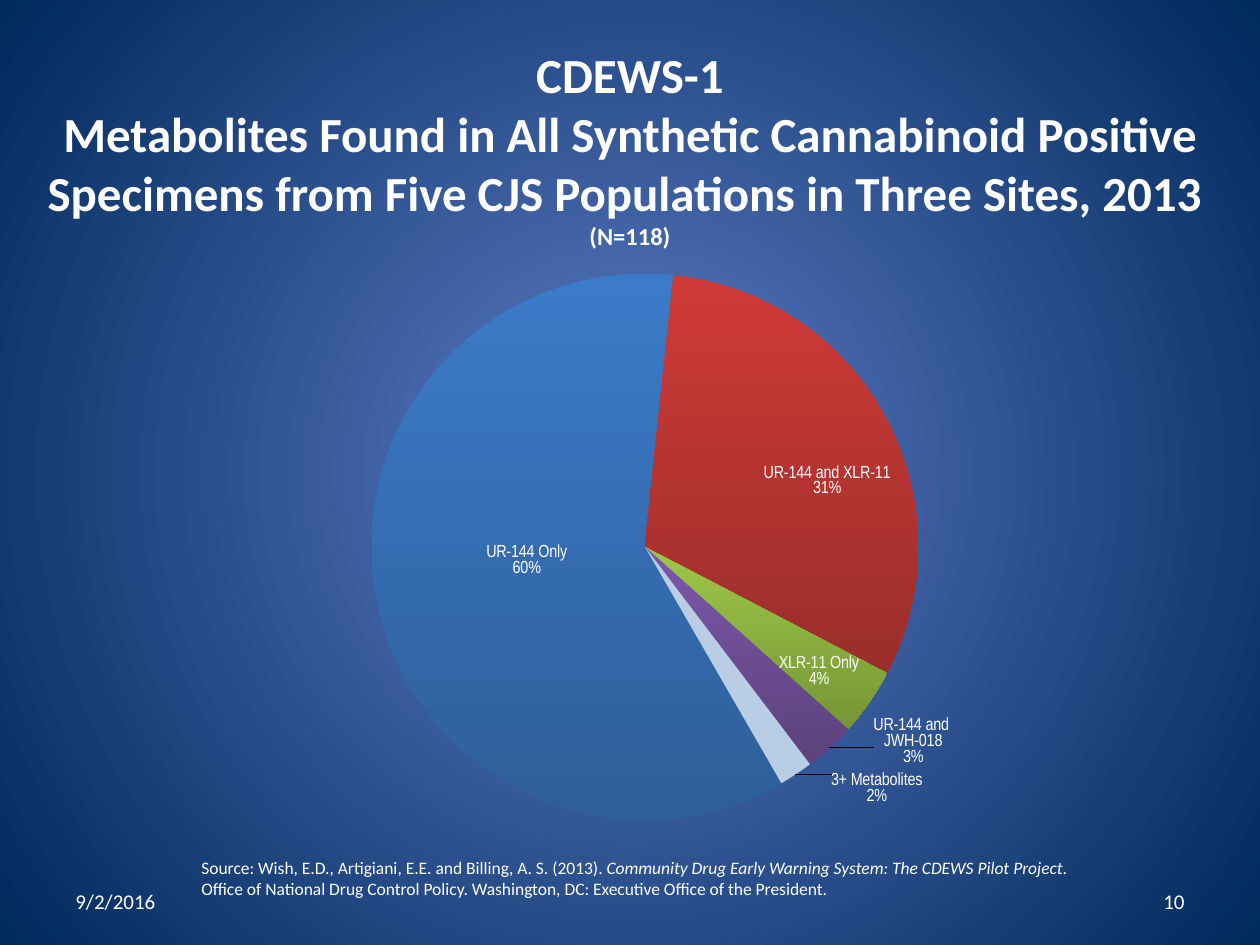
from lxml.etree import SubElement
from pptx import Presentation
from pptx.chart.data import CategoryChartData
from pptx.dml.color import RGBColor
from pptx.enum.chart import XL_CHART_TYPE, XL_LABEL_POSITION
from pptx.enum.text import MSO_ANCHOR, PP_ALIGN
from pptx.oxml.ns import qn
from pptx.util import Inches, Pt

WHITE = RGBColor(0xFF, 0xFF, 0xFF)
GLOW = RGBColor(0x5E, 0x7C, 0xC5)
NAVY = RGBColor(0x00, 0x29, 0x5C)
BLUE = RGBColor(0x3C, 0x7B, 0xC9), RGBColor(0x2E, 0x5F, 0x99)
RED = RGBColor(0xD0, 0x3A, 0x36), RGBColor(0x9A, 0x2E, 0x2B)
GREEN = RGBColor(0x9D, 0xC8, 0x48), RGBColor(0x76, 0x95, 0x35)
PURPLE = RGBColor(0x7C, 0x57, 0xA8), RGBColor(0x5D, 0x42, 0x7D)
PALE = RGBColor(0xB9, 0xCD, 0xE5), RGBColor(0xB9, 0xCD, 0xE5)

MID = XL_LABEL_POSITION.CENTER
OUT = XL_LABEL_POSITION.OUTSIDE_END
# category, value, colours, label text, label place, label shift
SLICES = [
    ("UR-144 Only", 60, BLUE, None, MID, (0.02, -0.02)),
    ("UR-144 and XLR-11", 31, RED, None, MID, (0.08, 0)),
    ("XLR-11 Only", 4, GREEN, "XLR-11 Only\n4%", MID, (0.08, 0.07)),
    ("UR-144 and JWH-018", 3, PURPLE, "UR-144 and \nJWH-018\n3%", OUT,
     (0.05, -0.05)),
    ("3+ Metabolites*", 2, PALE, "3+ Metabolites\n2%", OUT, (0.04, -0.01)),
]


def set_font(font, size, name="Calibri"):
    font.size = Pt(size)
    font.name = name
    font.color.rgb = WHITE


def add_text(slide, box, runs, size, align=PP_ALIGN.LEFT):
    """Add a one-paragraph box and return its frame and runs."""
    frame = slide.shapes.add_textbox(*map(Inches, box)).text_frame
    frame.word_wrap = True
    frame.vertical_anchor = MSO_ANCHOR.MIDDLE
    para = frame.paragraphs[0]
    para.text = runs[0]
    for text in runs[1:]:
        para.add_run().text = text
    para.alignment = align
    for run in para.runs:
        set_font(run.font, size)
    return frame, para.runs


def blend(fill, colors):
    fill.gradient()
    for stop, color in zip(fill.gradient_stops, colors):
        stop.color.rgb = color


def paint_back(slide):
    """Fill the background with a round gradient."""
    blend(slide.background.fill, (GLOW, NAVY))
    grad = slide.element.find(".//" + qn("a:gradFill"))
    grad.remove(grad.find(qn("a:lin")))
    ring = SubElement(grad, qn("a:path"), {"path": "circle"})
    SubElement(ring, qn("a:fillToRect"), dict.fromkeys("ltrb", "50000"))


def add_layout(parent, after, **values):
    """Place a manual layout right behind the given element."""
    layout = SubElement(parent, qn("c:layout"))
    manual = SubElement(layout, qn("c:manualLayout"))
    for key, value in values.items():
        SubElement(manual, qn("c:" + key), val=str(value))
    after.addnext(layout)


def show_parts(node):
    """Show category and percent on two lines."""
    for key, value in (("Val", 0), ("CatName", 1), ("Percent", 1)):
        node.find(qn("c:show" + key)).set("val", str(value))
    mark = SubElement(node, qn("c:separator"))
    mark.text = "\n"
    node.find(qn("c:showBubbleSize")).addnext(mark)


def style_slice(point, colors, text, place):
    blend(point.format.fill, colors)
    point.format.fill.gradient_angle = 270
    label = point.data_label
    if text:
        label.text_frame.text = text
        for para in label.text_frame.paragraphs:
            for run in para.runs:
                set_font(run.font, 10, "Arial Narrow")
    else:
        set_font(label.font, 10, "Arial Narrow")
    label.position = place


def add_pie(slide):
    data = CategoryChartData()
    data.categories = [item[0] for item in SLICES]
    data.add_series("Series 1", [item[1] for item in SLICES])
    box = map(Inches, (1.92, 1.25, 6.15, 5.42))
    chart = slide.shapes.add_chart(XL_CHART_TYPE.PIE, *box, data).chart
    chart.has_title = False
    chart.has_legend = False
    set_font(chart.font, 10)
    plot = chart.plots[0]
    plot.vary_by_categories = True
    series = plot.series[0]
    labels = series.data_labels
    set_font(labels.font, 10, "Arial Narrow")
    labels.number_format = "0%"
    labels.number_format_is_linked = False

    for i, (_, _, colors, text, place, _) in enumerate(SLICES):
        style_slice(series.points[i], colors, text, place)

    root = chart.element
    group = root.find(".//" + qn("c:ser")).find(qn("c:dLbls"))
    show_parts(group)
    lead = group.find(qn("c:showLeaderLines"))
    if lead is None:
        lead = SubElement(group, qn("c:showLeaderLines"))
    lead.set("val", "1")
    for node, item in zip(group.findall(qn("c:dLbl")), SLICES):
        show_parts(node)
        x, y = item[5]
        add_layout(node, node.find(qn("c:idx")), x=x, y=y)

    area = root.find(".//" + qn("c:plotArea"))
    for old in area.findall(qn("c:layout")):
        area.remove(old)
    pie = area.find(qn("c:pieChart"))
    for old in pie.findall(qn("c:firstSliceAng")):
        pie.remove(old)
    SubElement(pie, qn("c:firstSliceAng"), val="150")
    add_layout(area, pie, layoutTarget="inner", xMode="edge", yMode="edge",
               x=0.08, y=0.17, w=0.88, h=0.8)
    area.insert(0, area.find(qn("c:layout")))


def add_title(slide):
    head = ("CDEWS-1\vMetabolites Found in All Synthetic Cannabinoid Positive "
            "Specimens from Five CJS Populations in Three Sites, 2013 \v")
    frame, runs = add_text(slide, (0.25, 0.58, 9.5, 1.42),
                           [head, "(N=118)"], 28, PP_ALIGN.CENTER)
    frame.margin_bottom = Inches(0.29)
    for run in runs:
        run.font.bold = True
    runs[-1].font.size = Pt(14)


def add_source(slide):
    _, runs = add_text(slide, (1.5, 6.75, 7.33, 0.44), [
        "Source: Wish, E.D., Artigiani, E.E. and Billing, A. S. (2013). ",
        "Community Drug Early Warning System: The CDEWS Pilot Project",
        ". Office of National Drug Control Policy. Washington, DC: "
        "Executive Office of the President."], 10)
    runs[1].font.italic = True


def main():
    deck = Presentation()
    deck.slide_width = Inches(10)
    deck.slide_height = Inches(7.5)
    slide = deck.slides.add_slide(deck.slide_layouts[6])
    paint_back(slide)
    add_title(slide)
    add_pie(slide)
    add_source(slide)
    add_text(slide, (0.5, 6.95, 2.33, 0.4), ["9/2/2016"], 12)
    add_text(slide, (7.17, 6.95, 2.33, 0.4), ["10"], 12, PP_ALIGN.RIGHT)
    deck.save("out.pptx")


if __name__ == "__main__":
    main()
